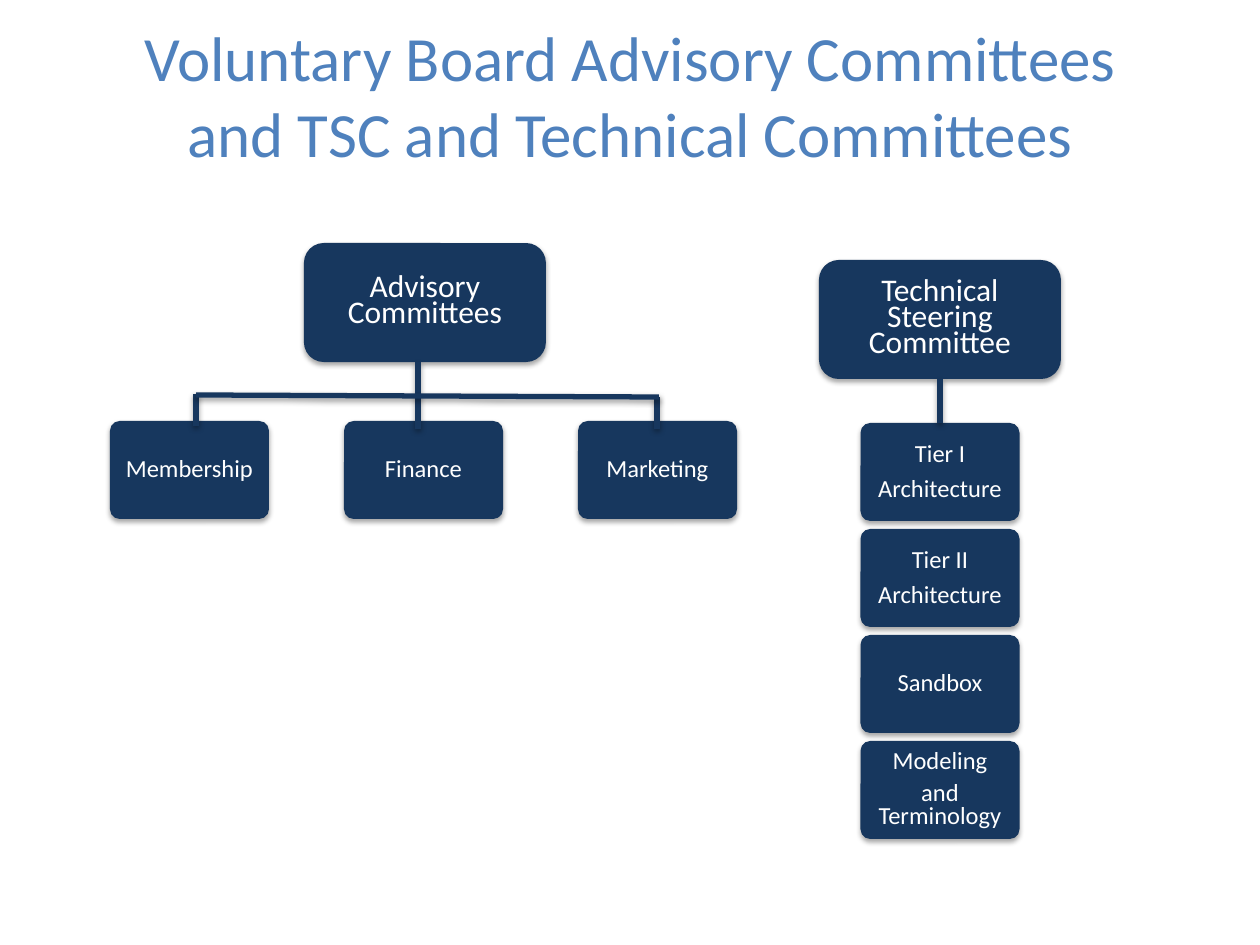
from lxml import etree
from pptx import Presentation
from pptx.dml.color import RGBColor
from pptx.enum.shapes import MSO_CONNECTOR, MSO_SHAPE
from pptx.enum.text import MSO_ANCHOR, MSO_AUTO_SIZE, PP_ALIGN
from pptx.oxml.ns import qn
from pptx.util import Pt

ROUND = MSO_SHAPE.ROUNDED_RECTANGLE
LINE = MSO_CONNECTOR.STRAIGHT
MID, LOW = MSO_ANCHOR.MIDDLE, MSO_ANCHOR.BOTTOM
CENTER = PP_ALIGN.CENTER
FIXED = MSO_AUTO_SIZE.NONE
TOP, BOTTOM = 0, 2

SCALE = 914400 / 126
FONT = "Calibri"
COLORS = {"title": "4F81BD", "navy": "17375E", "white": "FFFFFF", "shade": "000000"}

HEAD_W, HEAD_H = 242, 119
CARD_W, CARD_H = 159, 98


def px(n):
    return round(n * SCALE)


def color(name):
    return RGBColor.from_string(COLORS[name])


def add_shade(shape, dist, alpha):
    """Give a shape or connector a soft shadow straight below it."""
    props = shape._element.spPr
    effects = etree.SubElement(props, qn("a:effectLst"))
    shade = etree.SubElement(
        effects, qn("a:outerShdw"), blurRad=str(Pt(3.1)), dist=str(Pt(dist)),
        dir="5400000", rotWithShape="0")
    tint = etree.SubElement(shade, qn("a:srgbClr"), val=COLORS["shade"])
    etree.SubElement(tint, qn("a:alpha"), val=str(alpha * 1000))


def set_text(frame, text, size, tone, lead=None, after=None):
    frame.text = text
    frame.word_wrap = True
    for para in frame.paragraphs:
        para.alignment = CENTER
        para.line_spacing = lead
        para.space_after = after
        for run in para.runs:
            run.font.size = Pt(size)
            run.font.name = FONT
            run.font.color.rgb = color(tone)


def add_box(slide, x, y, w, h):
    box = slide.shapes.add_shape(ROUND, px(x), px(y), px(w), px(h))
    box.fill.solid()
    box.fill.fore_color.rgb = color("navy")
    box.line.fill.background()
    box.text_frame.vertical_anchor = MID
    add_shade(box, 1.8, 35)
    return box


def add_head(slide, x, y, text):
    head = add_box(slide, x, y, HEAD_W, HEAD_H)
    set_text(head.text_frame, text, 18, "white", 0.7)
    return head


def add_card(slide, x, y, text, lead=0.9):
    card = add_box(slide, x, y, CARD_W, CARD_H)
    card.adjustments[0] = 0.1
    frame = card.text_frame
    frame.margin_left = frame.margin_right = px(7)
    frame.margin_top = frame.margin_bottom = px(7)
    set_text(frame, text, 14, "white", lead, Pt(5))
    return card


def add_line(slide, x1, y1, x2, y2):
    line = slide.shapes.add_connector(LINE, px(x1), px(y1), px(x2), px(y2))
    line.line.color.rgb = color("navy")
    line.line.width = Pt(3)
    add_shade(line, 1.6, 38)
    return line


def add_title(slide, x, y, w, h):
    title = slide.shapes.title
    title.left, title.top, title.width, title.height = px(x), px(y), px(w), px(h)
    frame = title.text_frame
    frame.auto_size = FIXED
    frame.vertical_anchor = LOW
    set_text(frame, "Voluntary Board Advisory Committees\v"
             "and TSC and Technical Committees", 36, "title")


def add_board(slide, x, y):
    """Advisory committees: a head over a row of three cards."""
    add_head(slide, x + 194, y, "Advisory\nCommittees")
    names = ("Membership", "Finance", "Marketing")
    for i, name in enumerate(names):
        add_card(slide, x + 234 * i, y + 178, name)
    # Trunk, outer drops and crossbar
    add_line(slide, x + 308, y + HEAD_H, x + 308, y + 186)
    add_line(slide, x + 86, y + 151, x + 86, y + 183)
    add_line(slide, x + 547, y + 154, x + 547, y + 186)
    add_line(slide, x + 549, y + 154, x + 86, y + 152)


def add_tech(slide, x, y):
    """Technical steering committee: a head over a column of four cards."""
    head = add_head(slide, x, y, "Technical Steering Committee")
    left, top = x + (HEAD_W - CARD_W) / 2, y + 163
    names = ("Tier I\nArchitecture", "Tier II\nArchitecture", "Sandbox",
             "Modeling\nand Terminology")
    leads = (0.9, 0.9, 0.9, 0.8)
    cards = [add_card(slide, left, top + 106 * i, name, lead)
             for i, (name, lead) in enumerate(zip(names, leads))]
    mid = x + HEAD_W / 2
    stem = add_line(slide, mid, y + HEAD_H, mid, top)
    stem.begin_connect(head, BOTTOM)
    stem.end_connect(cards[0], TOP)


def main():
    deck = Presentation()
    deck.slide_width, deck.slide_height = px(1260), px(945)
    slide = deck.slides.add_slide(deck.slide_layouts[5])
    add_title(slide, 63, 57, 1134, 119)
    add_board(slide, 110, 243)
    add_tech(slide, 819, 260)
    deck.save("out.pptx")


if __name__ == "__main__":
    main()
